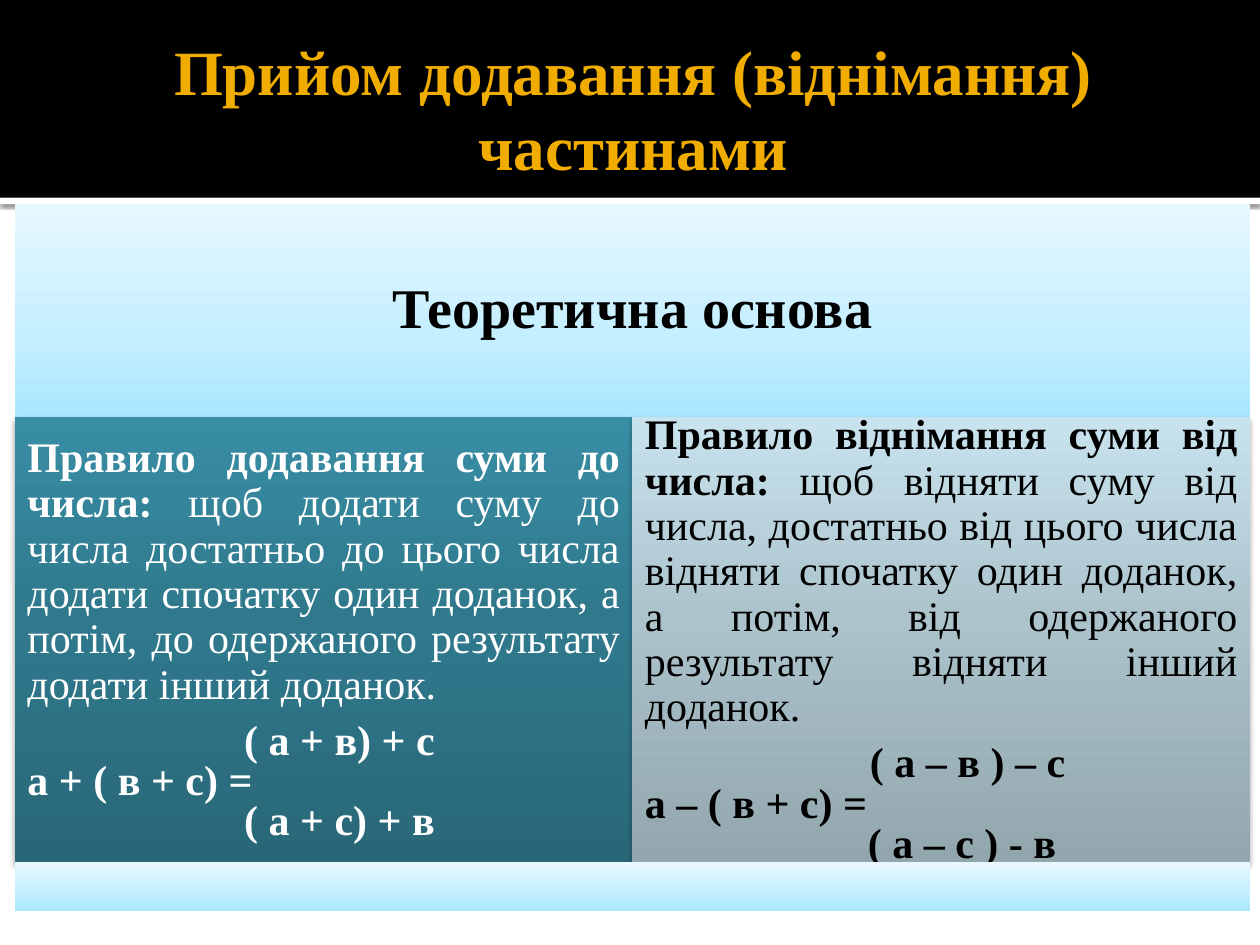
from copy import deepcopy
from lxml import etree
from pptx import Presentation
from pptx.dml.color import RGBColor
from pptx.enum.shapes import MSO_SHAPE as SHAPE
from pptx.enum.text import MSO_ANCHOR as ANCHOR, MSO_AUTO_SIZE as AUTO, PP_ALIGN as AL
from pptx.oxml import parse_xml
from pptx.oxml.ns import nsdecls, qn
from pptx.util import Inches, Pt


def add_block(x, y, w, h, colors, mid=0.55, shadow=None):
    sp = s.shapes.add_shape(SHAPE.RECTANGLE, Inches(x), Inches(y), Inches(w), Inches(h))
    sp.shadow.inherit = False
    sp.line.fill.background()
    if len(colors) == 1:
        sp.fill.solid()
        sp.fill.fore_color.rgb = RGBColor.from_string(colors[0])
    else:
        sp.fill.gradient()
        sp.fill.gradient_angle = 90
        stops = sp.element.spPr.find(".//" + qn("a:gsLst"))
        stops.insert(1, deepcopy(stops[0]))
        for stop, pos, color in zip(sp.fill.gradient_stops, (0, mid, 1), colors):
            stop.position = pos
            stop.color.rgb = RGBColor.from_string(color)
    if shadow:
        alpha, blur, dist = shadow
        sp.element.spPr.find(qn("a:effectLst")).append(parse_xml(
            f'<a:outerShdw {nsdecls("a")} blurRad="{Pt(blur)}" dist="{Pt(dist)}" '
            f'dir="5400000" algn="t" rotWithShape="0"><a:srgbClr val="000000">'
            f'<a:alpha val="{alpha * 1000}"/></a:srgbClr></a:outerShdw>'))
    tf = sp.text_frame
    tf.word_wrap = True
    tf.vertical_anchor = ANCHOR.MIDDLE
    tf.margin_left = tf.margin_right = tf.margin_top = tf.margin_bottom = Inches(0.1)
    return sp


def add_run(p, text, size, color, bold=True):
    r = p.add_run()
    r.text = text
    r.font.name = "Times New Roman"
    r.font.size = Pt(size)
    r.font.bold = bold
    r.font.color.rgb = RGBColor.from_string(color)


prs = Presentation()
prs.slide_width, prs.slide_height = Inches(10), Inches(7.5)
s = prs.slides.add_slide(prs.slide_layouts[5])

add_block(0, 1.57, 10, 0.05, ["FFFFFF"], shadow=(60, 2.5, 0.8))
band = add_block(0, 0, 10, 1.57, ["000000"])

title = s.shapes.title
band.element.addnext(title.element)
title.left, title.top, title.width, title.height = Inches(0.5), Inches(0.17), Inches(9), Inches(1.37)
tf = title.text_frame
tf.auto_size = AUTO.NONE
tf.word_wrap = True
tf.vertical_anchor = ANCHOR.MIDDLE
tf.margin_left = Inches(0.1)
tf.margin_right = tf.margin_top = tf.margin_bottom = Inches(0.05)
p = tf.paragraphs[0]
p.alignment = AL.CENTER
add_run(p, "Прийом додавання (віднімання) частинами", 36, "F0AD00")

left, width = 0.12, 9.8
sky = ["A9E7FF", "C2EEFF", "E8F8FF"]
header = add_block(left, 1.62, width, 1.69, sky, mid=0.35)
p = header.text_frame.paragraphs[0]
p.alignment = AL.CENTER
p.line_spacing = 0.9
p.space_after = Pt(11.2)
add_run(p, "Теоретична основа", 32, "000000")

rules = [
    (["296778", "30798D", "388DA4"], "FFFFFF",
     "Правило додавання суми до числа: ",
     "щоб додати суму до числа достатньо до цього числа додати спочатку один доданок, "
     "а потім, до одержаного результату додати інший доданок.",
     [("( а + в) + с", 0.25), ("а + ( в + с) =", 0), ("( а + с) + в", 0.25)]),
    (["92A6AD", "ACC3CC", "C8E3EE"], "000000",
     "Правило віднімання суми від числа: ",
     "щоб відняти суму від числа, достатньо від цього числа відняти спочатку один доданок, "
     "а потім, від одержаного результату відняти інший доданок.",
     [("( а – в ) – с", 0.42), ("а – ( в + с) =", 0), ("( а – с ) - в", 0.33)]),
]
for i, (colors, ink, name, rule, formulas) in enumerate(rules):
    sp = add_block(left + i * width / 2, 3.31, width / 2, 3.54, colors, shadow=(38, 3.1, 2))
    tf = sp.text_frame
    p = tf.paragraphs[0]
    p.alignment = AL.JUSTIFY
    p.line_spacing = 0.9
    p.space_after = Pt(8.4)
    add_run(p, name, 24, ink)
    add_run(p, rule, 24, ink, bold=False)
    for formula, indent in formulas:
        p = tf.add_paragraph()
        p.alignment = AL.CENTER if indent else AL.LEFT
        p.line_spacing = 0.8
        p._p.get_or_add_pPr().set("marL", str(Inches(indent)))
        add_run(p, formula, 24, ink)

add_block(left, 6.84, width, 0.39, sky, mid=0.35)

prs.save("out.pptx")
